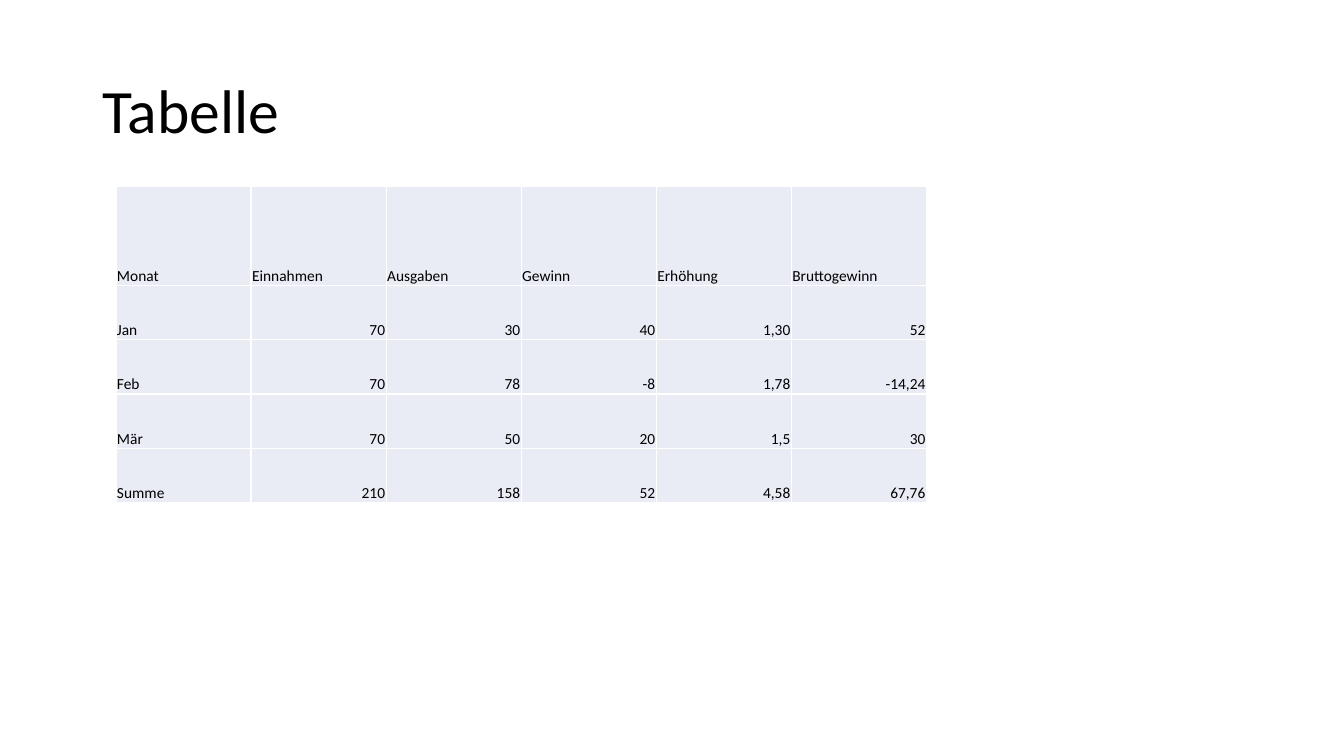
"""Build the slide "Tabelle" with a monthly table of income, expenses and profit."""
from dataclasses import dataclass

from lxml.etree import SubElement
from pptx import Presentation
from pptx.dml.color import RGBColor
from pptx.enum.text import MSO_ANCHOR as Anchor, PP_ALIGN as Align
from pptx.oxml.ns import qn
from pptx.util import Inches, Pt


@dataclass(frozen=True)
class Theme:
    font: str = "Calibri"
    text: str = "000000"
    cell: str = "E9EBF5"
    border: str = "FFFFFF"
    title_size: int = 44
    cell_size: int = 11


theme = Theme()

ROWS = [
    ["Monat", "Einnahmen", "Ausgaben", "Gewinn", "Erhöhung", "Bruttogewinn"],
    ["Jan", "70", "30", "40", "1,30", "52"],
    ["Feb", "70", "78", "-8", "1,78", "-14,24"],
    ["Mär", "70", "50", "20", "1,5", "30"],
    ["Summe", "210", "158", "52", "4,58", "67,76"],
]
COL_WIDTH = 1.34
HEADER_HEIGHT, ROW_HEIGHT = 0.98, 0.54


def add_run(p, text, size):
    r = p.add_run()
    r.text = text
    r.font.name = theme.font
    r.font.size = Pt(size)
    r.font.color.rgb = RGBColor.from_string(theme.text)


def add_borders(cell):
    tc_pr = cell._tc.get_or_add_tcPr()
    for side in ("a:lnL", "a:lnR", "a:lnT", "a:lnB"):
        line = SubElement(tc_pr, qn(side), w=str(Pt(1)))
        fill = SubElement(line, qn("a:solidFill"))
        SubElement(fill, qn("a:srgbClr"), val=theme.border)


prs = Presentation()
prs.slide_width, prs.slide_height = Inches(13.33), Inches(7.5)
s = prs.slides.add_slide(prs.slide_layouts[6])

title = s.shapes.add_textbox(Inches(0.92), Inches(0.4), Inches(11.5), Inches(1.45))
tf = title.text_frame
tf.word_wrap = True
tf.vertical_anchor = Anchor.MIDDLE
p = tf.paragraphs[0]
p.line_spacing = 0.9
add_run(p, "Tabelle", theme.title_size)

n_rows, n_cols = len(ROWS), len(ROWS[0])
frame = s.shapes.add_table(
    n_rows, n_cols, Inches(1.15), Inches(1.85),
    Inches(n_cols * COL_WIDTH), Inches(HEADER_HEIGHT + (n_rows - 1) * ROW_HEIGHT))
table = frame.table
table.first_row = table.horz_banding = False
for col in table.columns:
    col.width = Inches(COL_WIDTH)

for i, values in enumerate(ROWS):
    table.rows[i].height = Inches(ROW_HEIGHT if i else HEADER_HEIGHT)
    for j, value in enumerate(values):
        cell = table.cell(i, j)
        add_borders(cell)
        cell.fill.solid()
        cell.fill.fore_color.rgb = RGBColor.from_string(theme.cell)
        cell.margin_left = cell.margin_right = cell.margin_top = Inches(0.01)
        cell.margin_bottom = 0
        cell.vertical_anchor = Anchor.BOTTOM
        p = cell.text_frame.paragraphs[0]
        p.alignment = Align.RIGHT if i and j else Align.LEFT
        add_run(p, value, theme.cell_size)

prs.save("out.pptx")
